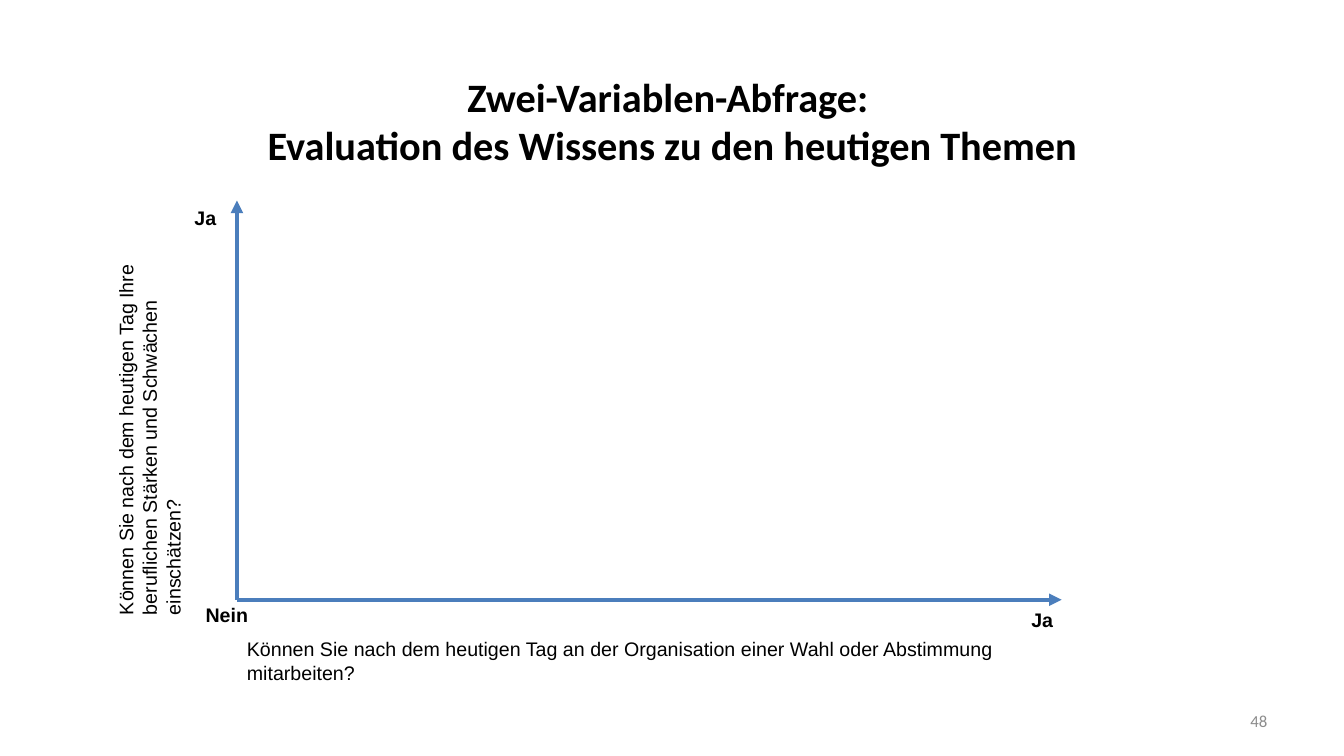
import pptx
import pptx.dml.color
import pptx.enum.shapes
import pptx.enum.text
import pptx.oxml
import pptx.oxml.ns
import pptx.util
from dataclasses import dataclass

Inches = pptx.util.Inches
Align = pptx.enum.text.PP_ALIGN
Anchor = pptx.enum.text.MSO_ANCHOR


@dataclass(frozen=True)
class Theme:
    text: str = "000000"
    muted: str = "8C8C8C"
    axis: str = "4B7EBC"
    heading_font: str = "Calibri"
    body_font: str = "Arial"
    title_size: float = 28.8
    body_size: float = 14
    number_size: float = 12
    axis_width: float = 3


THEME = Theme()

TITLE = "Zwei-Variablen-Abfrage: \vEvaluation des Wissens zu den heutigen Themen"
TITLE_BOX = (0.67, 0.84, 12, 0.71)
SLIDE_NUMBER = "48"
SLIDE_NUMBER_BOX = (9.56, 6.95, 3.11, 0.4)

ORIGIN = (2.35, 5.95)
AXIS_ENDS = [(10.53, 5.95), (2.35, 1.99)]

# text, (left, top, width, height), rotation
QUESTIONS = [
    ("Können Sie nach dem heutigen Tag an der Organisation einer Wahl "
     "oder Abstimmung mitarbeiten?", (2.35, 6.27, 8.02, 0.57), 0),
    ("Können Sie nach dem heutigen Tag Ihre beruflichen Stärken und "
     "Schwächen einschätzen?", (-0.63, 3.68, 4.23, 0.81), 270),
]

# text, (left, top)
ANSWERS = [("Nein", (1.94, 5.93)), ("Ja", (10.13, 5.98)), ("Ja", (1.83, 1.99))]
ANSWER_SIZE = (0.79, 0.34)


def place(shape, box):
    shape.left, shape.top, shape.width, shape.height = map(Inches, box)


def write(shape, text, font_name, size, color=THEME.text, bold=False,
          align=Align.LEFT, anchor=Anchor.TOP):
    frame = shape.text_frame
    frame.word_wrap = True
    frame.auto_size = pptx.enum.text.MSO_AUTO_SIZE.NONE
    frame.vertical_anchor = anchor
    paragraph = frame.paragraphs[0]
    paragraph.text = text
    paragraph.alignment = align
    font = paragraph.font
    font.name = font_name
    font.size = pptx.util.Pt(size)
    font.bold = bold
    font.color.rgb = pptx.dml.color.RGBColor.from_string(color)


def add_text(slide, text, box, *style, **options):
    shape = slide.shapes.add_textbox(*map(Inches, box))
    write(shape, text, *style, **options)
    return shape


def add_axis(slide, start, end):
    axis = slide.shapes.add_connector(
        pptx.enum.shapes.MSO_CONNECTOR.STRAIGHT, *map(Inches, start + end))
    axis.line.color.rgb = pptx.dml.color.RGBColor.from_string(THEME.axis)
    axis.line.width = pptx.util.Pt(THEME.axis_width)
    arrowhead = pptx.oxml.parse_xml(
        f'<a:tailEnd {pptx.oxml.ns.nsdecls("a")} type="triangle"/>')
    axis.line._get_or_add_ln().append(arrowhead)
    properties = axis._element.spPr
    properties.append(pptx.oxml.parse_xml(
        f'<a:effectLst {pptx.oxml.ns.nsdecls("a")}/>'))


def main():
    presentation = pptx.Presentation()
    presentation.slide_width = Inches(13.33)
    presentation.slide_height = Inches(7.5)
    slide = presentation.slides.add_slide(presentation.slide_layouts[5])

    title = slide.shapes.title
    place(title, TITLE_BOX)
    write(title, TITLE, THEME.heading_font, THEME.title_size, bold=True,
          align=Align.CENTER, anchor=Anchor.MIDDLE)
    add_text(slide, SLIDE_NUMBER, SLIDE_NUMBER_BOX, THEME.heading_font,
             THEME.number_size, color=THEME.muted, align=Align.RIGHT,
             anchor=Anchor.MIDDLE)

    for end in AXIS_ENDS:
        add_axis(slide, ORIGIN, end)
    for text, box, rotation in QUESTIONS:
        question = add_text(slide, text, box, THEME.body_font, THEME.body_size)
        question.rotation = rotation
    for text, corner in ANSWERS:
        add_text(slide, text, corner + ANSWER_SIZE, THEME.body_font,
                 THEME.body_size, bold=True)

    presentation.save("out.pptx")


if __name__ == "__main__":
    main()
